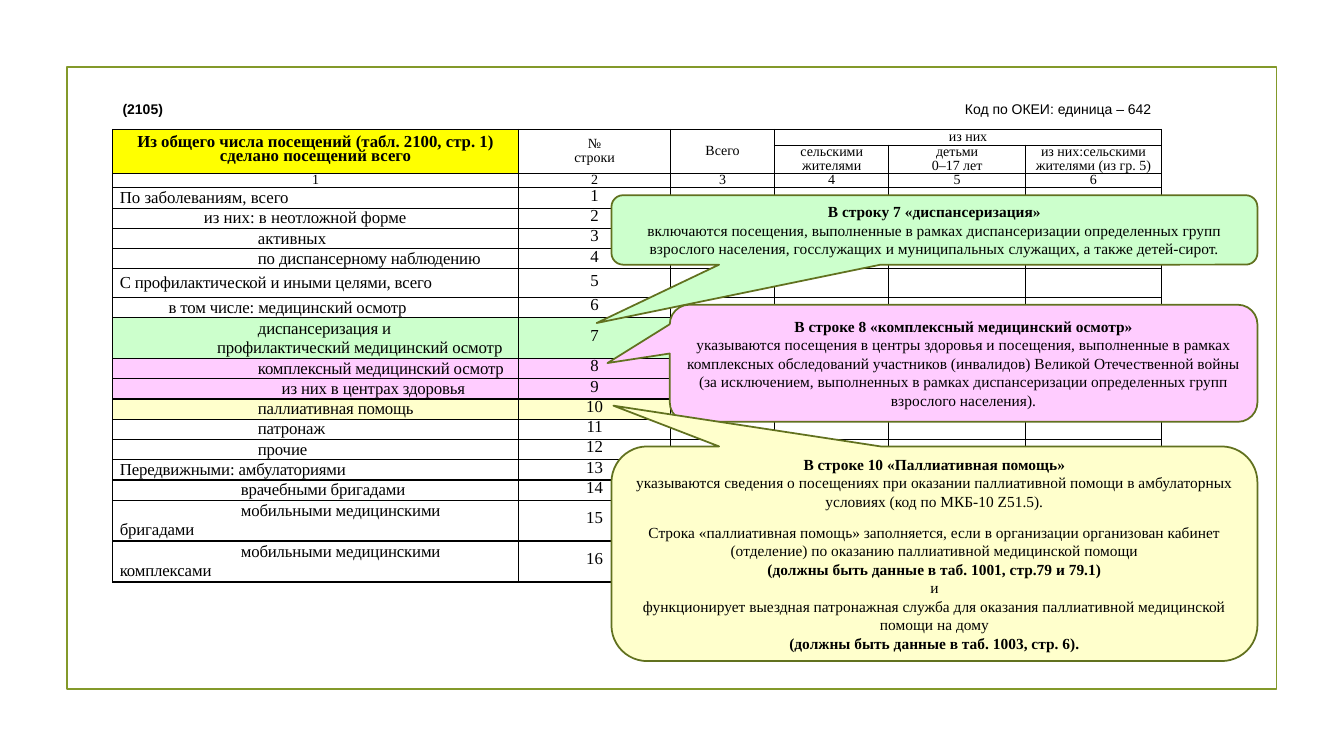
import pptx
import pptx.util
import pptx.dml.color
import pptx.enum.text
import pptx.enum.shapes
import lxml.etree
from pptx.oxml.ns import qn

Cm, Pt = pptx.util.Cm, pptx.util.Pt
ALIGN = pptx.enum.text.PP_ALIGN
MIDDLE = pptx.enum.text.MSO_ANCHOR.MIDDLE
SHAPE = pptx.enum.shapes.MSO_SHAPE
SERIF, SANS = "Times New Roman", "Arial"
BLACK, GREEN, PINK, CREAM, YELLOW = "000000", "CCFFCC", "FFCCFF", "FFFFCC", "FFFF00"

CODE = "(2105)"
UNIT = "Код по ОКЕИ: единица – 642"
WIDTHS = [10.23, 3.83, 2.62, 2.88, 3.44, 3.43]
HEAD = [
    (0, 0, "Из общего числа посещений (табл. 2100, стр. 1)\vсделано посещений всего"),
    (0, 1, "№\vстроки"),
    (0, 2, "Всего"),
    (0, 3, "из них"),
    (1, 3, "сельскими жителями"),
    (1, 4, "детьми\v0–17 лет"),
    (1, 5, "из них:сельскими жителями (из гр. 5)"),
]
MERGES = [(0, 0, 1, 0), (0, 1, 1, 1), (0, 2, 1, 2), (0, 3, 0, 5)]
TOPS = [0.4, 0.72, 0.35]
LOW, MID, TALL = 0.51, 0.72, 1.03
TIGHT = 4
ROWS = [
    (LOW, [("По заболеваниям, всего", 0)]),
    (LOW, [("из них: в неотложной форме", 2.12)]),
    (LOW, [("активных", 3.48)]),
    (LOW, [("по диспансерному наблюдению", 3.48)]),
    (MID, [("С профилактической и иными целями, всего", 0)]),
    (LOW, [("в том числе: медицинский осмотр", 1.23)]),
    (TALL, [("диспансеризация и", 3.48),
            ("профилактический медицинский осмотр", 2.45)]),
    (LOW, [("комплексный медицинский осмотр", 3.48)]),
    (LOW, [("из них в центрах здоровья", 4.08)]),
    (LOW, [("паллиативная помощь", 3.48)]),
    (LOW, [("патронаж", 3.48)]),
    (LOW, [("прочие", 3.48)]),
    (LOW, [("Передвижными: амбулаториями", 0)]),
    (LOW, [("врачебными бригадами", 3.05)]),
    (TALL, [("мобильными медицинскими бригадами", 3.05)]),
    (TALL, [("мобильными медицинскими комплексами", 3.05)]),
]
TINTS = {7: (GREEN, 6), 8: (PINK, 2), 9: (PINK, 2), 10: (CREAM, 2)}
NOTES = [
    ((15.41, 4.92, 16.28, 1.75), (-0.523, 1.341), GREEN, [
        ("В строку 7 «диспансеризация»", True, 0),
        ("включаются посещения, выполненные в рамках диспансеризации определенных групп "
         "взрослого населения, госслужащих и муниципальных служащих, а также детей-сирот.", False, 0),
    ]),
    ((16.88, 7.68, 14.81, 2.95), (-0.606, -0.002), PINK, [
        ("В строке 8 «комплексный медицинский осмотр»", True, 0),
        ("указываются посещения в центры здоровья и посещения, выполненные в рамках комплексных "
         "обследований участников (инвалидов) Великой Отечественной войны (за исключением, "
         "выполненных в рамках диспансеризации определенных групп", False, 0),
        ("взрослого населения).", False, 0),
    ]),
    ((15.41, 11.25, 16.28, 5.41), (-0.497, -0.69), CREAM, [
        ("В строке 10 «Паллиативная помощь»", True, 0),
        ("указываются сведения о посещениях при оказании паллиативной помощи в амбулаторных "
         "условиях (код по МКБ-10 Z51.5).", False, 0),
        ("Строка «паллиативная помощь» заполняется, если в организации организован кабинет "
         "(отделение) по оказанию паллиативной медицинской помощи", False, 9),
        ("(должны быть данные в таб. 1001, стр.79 и 79.1)", True, 0),
        ("и", False, 0),
        ("функционирует выездная патронажная служба для оказания паллиативной медицинской "
         "помощи на дому", False, 0),
        ("(должны быть данные в таб. 1003, стр. 6).", True, 0),
    ]),
]


def color(code):
    return pptx.dml.color.RGBColor.from_string(code)


def paint(item, code):
    item.fill.solid()
    item.fill.fore_color.rgb = color(code)


def style(para, size, bold=False, face=SERIF):
    for run in para.runs:
        run.font.size = Pt(size)
        run.font.bold = bold
        run.font.name = face
        run.font.color.rgb = color(BLACK)


def place(slide, kind, box, line):
    shape = slide.shapes.add_shape(kind, *map(Cm, box))
    shape.shadow.inherit = False
    shape.line.color.rgb = color(line)
    shape.line.width = Pt(1.25)
    return shape


def border(cell):
    props = cell._tc.get_or_add_tcPr()
    for spot, side in enumerate(("lnL", "lnR", "lnT", "lnB")):
        line = lxml.etree.Element(qn("a:" + side), w=str(Pt(1)))
        fill = lxml.etree.SubElement(line, qn("a:solidFill"))
        lxml.etree.SubElement(fill, qn("a:srgbClr"), val=BLACK)
        props.insert(spot, line)


def center(cell, text, size, bold=False):
    para = cell.text_frame.paragraphs[0]
    para.text = text
    para.alignment = ALIGN.CENTER
    para.line_spacing = Pt(10)
    style(para, size, bold)


def label(cell, lines, tight):
    cell.text_frame.text = "\n".join(text for text, shift in lines)
    for para, (text, shift) in zip(cell.text_frame.paragraphs, lines):
        para._p.get_or_add_pPr().set("indent", str(Cm(shift)))
        style(para, 12)
        if tight:
            para.runs[0].font._element.set("spc", "-10")


def shrink(cell):
    para = cell.text_frame.paragraphs[0]
    if not para.runs:
        lxml.etree.SubElement(para._p, qn("a:endParaRPr"), sz="800")


def header(slide):
    box = slide.shapes.add_textbox(Cm(2.84), Cm(2.39), Cm(26.44), Cm(0.69))
    box.text_frame.word_wrap = True
    box.text_frame.vertical_anchor = MIDDLE
    para = box.text_frame.paragraphs[0]
    tabs = lxml.etree.SubElement(para._p.get_or_add_pPr(), qn("a:tabLst"))
    lxml.etree.SubElement(tabs, qn("a:tab"), pos=str(Cm(25.92)), algn="r")
    para.add_run().text = CODE
    para.add_run().text = "\t" + UNIT
    style(para, 10, face=SANS)
    para.runs[0].font.bold = True


def grid(slide):
    tall = TOPS + [high for high, lines in ROWS]
    frame = slide.shapes.add_table(len(tall), len(WIDTHS), Cm(2.84), Cm(3.26),
                                   Cm(sum(WIDTHS)), Cm(sum(tall)))
    table = frame.table
    table.first_row = table.horz_banding = False
    for col, wide in zip(table.columns, WIDTHS):
        col.width = Cm(wide)
    for row, high in zip(table.rows, tall):
        row.height = Cm(high)
    for cell in table.iter_cells():
        cell.margin_left = cell.margin_right = Cm(0.18)
        cell.margin_top = cell.margin_bottom = 0
        cell.vertical_anchor = MIDDLE
        cell.fill.background()
        border(cell)
    for top, left, end, right in MERGES:
        table.cell(top, left).merge(table.cell(end, right))
    for row, col, text in HEAD:
        center(table.cell(row, col), text, 10 if col else 12, col == 0)
    paint(table.cell(0, 0), YELLOW)
    for col in range(len(WIDTHS)):
        center(table.cell(2, col), str(col + 1), 10)
    for num, (high, lines) in enumerate(ROWS, 1):
        row = num + len(TOPS) - 1
        label(table.cell(row, 0), lines, num >= TIGHT)
        center(table.cell(row, 1), str(num), 12)
        tint, count = TINTS.get(num, (None, 0))
        for col in range(count):
            paint(table.cell(row, col), tint)
    for cell in table.iter_cells():
        shrink(cell)


def note(slide, box, tip, tint, lines):
    shape = place(slide, SHAPE.ROUNDED_RECTANGULAR_CALLOUT, box, "61711F")
    paint(shape, tint)
    for spot, value in enumerate((*tip, 0.167)):
        shape.adjustments[spot] = value
    frame = shape.text_frame
    frame.word_wrap = True
    frame.vertical_anchor = MIDDLE
    frame.text = "\n".join(text for text, bold, gap in lines)
    for para, (text, bold, gap) in zip(frame.paragraphs, lines):
        para.alignment = ALIGN.CENTER
        if gap:
            para.space_before = Pt(gap)
        style(para, 11, bold)


def main():
    deck = pptx.Presentation()
    deck.slide_width, deck.slide_height = Cm(33.87), Cm(19.05)
    slide = deck.slides.add_slide(deck.slide_layouts[6])
    place(slide, SHAPE.RECTANGLE, (1.69, 1.69, 30.48, 15.67), "83992A").fill.background()
    header(slide)
    grid(slide)
    for item in NOTES:
        note(slide, *item)
    deck.save("out.pptx")


if __name__ == "__main__":
    main()
